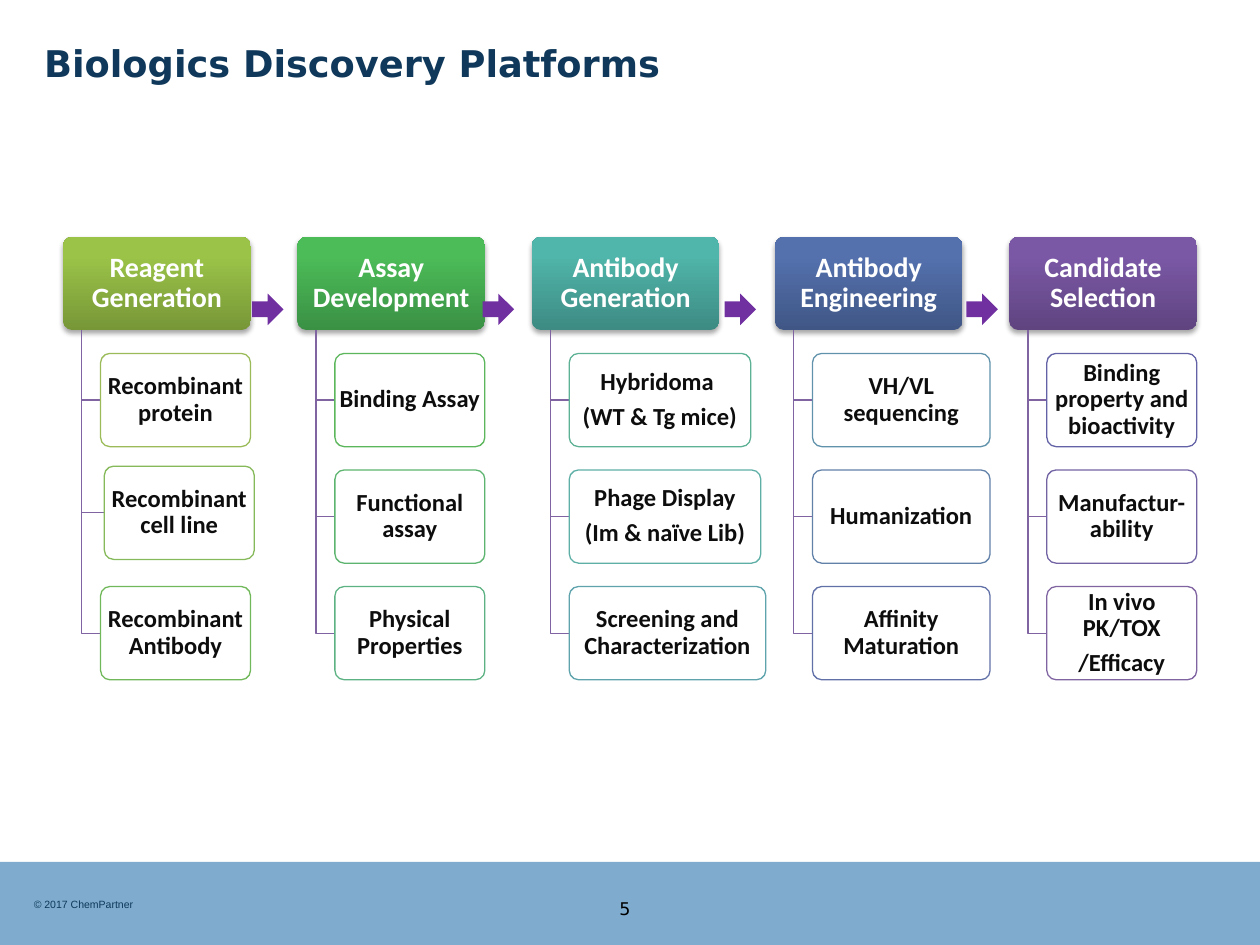
from lxml.etree import SubElement
from pptx import Presentation
from pptx.dml.color import RGBColor
from pptx.enum.shapes import MSO_SHAPE as Preset
from pptx.enum.text import MSO_ANCHOR as Anchor, PP_ALIGN as Align
from pptx.oxml.ns import qn
from pptx.util import Inches, Pt

NAVY = RGBColor(0x0F, 0x38, 0x5A)
BAR_BLUE = RGBColor(0x00, 0x5B, 0x9E)
BRANCH_PURPLE = RGBColor(0x80, 0x64, 0xA2)
ARROW_PURPLE = RGBColor(0x70, 0x30, 0xA0)
INK = RGBColor(0x0D, 0x0D, 0x0D)
BLACK = RGBColor(0, 0, 0)
WHITE = RGBColor(0xFF, 0xFF, 0xFF)

# left, heading, dark and light shades, then (text, width, outline) for each card
STAGES = [
    (0.5, "Reagent Generation", "779737", "9BC348", [
        ("Recombinant protein", 1.19, "9BBB59"),
        ("Recombinant cell line", 1.19, "85B95A"),
        ("Recombinant Antibody", 1.19, "70B85A")]),
    (2.36, "Assay Development", "3A9144", "4CBC58", [
        ("Binding Assay", 1.19, "5CB65B"),
        ("Functional assay", 1.19, "5CB46F"),
        ("Physical Properties", 1.19, "5DB283")]),
    (4.22, "Antibody Generation", "3D8B83", "50B5AA", [
        ("Hybridoma \n(WT & Tg mice)", 1.44, "5DB195"),
        ("Phage Display\n(Im & naïve Lib)", 1.52, "5EAFA6"),
        ("Screening and Characterization", 1.56, "5FA4AD")]),
    (6.15, "Antibody Engineering", "405786", "5471AE", [
        ("VH/VL sequencing", 1.41, "6092AB"),
        ("Humanization", 1.41, "6181A9"),
        ("Affinity Maturation", 1.41, "6171A8")]),
    (8.01, "Candidate Selection", "5F4480", "7B58A6", [
        ("Binding property and bioactivity", 1.19, "6362A6"),
        ("Manufactur-ability", 1.19, "7263A4"),
        ("In vivo PK/TOX\n/Efficacy", 1.19, "8064A2")]),
]
NUDGES = {"Recombinant cell line": (0.03, -0.03)}
ARROW_LEFTS = [2, 3.83, 5.75, 7.67]
HEAD_TOP, HEAD_WIDTH, BOX_HEIGHT = 1.88, 1.49, 0.74
ROW_STEP = BOX_HEIGHT * 1.25
INDENT = HEAD_WIDTH / 5


def write(shape, text, font="Calibri", size=14, color=INK, bold=True,
          align=Align.CENTER, anchor=Anchor.MIDDLE, inset=(0.01, 0),
          line=0.9, after=0.35):
    """Fill a shape with formatted text, one paragraph per line."""
    frame = shape.text_frame
    frame.word_wrap = True
    frame.vertical_anchor = anchor
    frame.margin_left = frame.margin_right = Inches(inset[0])
    frame.margin_top = frame.margin_bottom = Inches(inset[1])
    frame.text = text
    for para in frame.paragraphs:
        para.alignment = align
        para.line_spacing = line
        para.space_before = Pt(0)
        para.space_after = Pt(size * after)
        para.font.name, para.font.size = font, Pt(size)
        para.font.bold, para.font.color.rgb = bold, color


def add_preset(page, preset, *place, fill=None, alpha=100, line=None):
    """Add a shadowless preset shape with an optional fill and outline."""
    shape = page.shapes.add_shape(preset, *map(Inches, place))
    shape.shadow.inherit = False
    if preset == Preset.ROUNDED_RECTANGLE:
        shape.adjustments[0] = 0.1
    if fill is not None:
        shape.fill.solid()
        shape.fill.fore_color.rgb = fill
        if alpha < 100:
            tint = shape.fill._xPr.find(".//" + qn("a:srgbClr"))
            SubElement(tint, qn("a:alpha"), val=str(alpha * 1000))
    if line is None:
        shape.line.fill.background()
    else:
        shape.line.color.rgb = line
        shape.line.width = Pt(0.75)
    return shape


def add_heading(page, left, text, dark, light):
    """Add a stage heading with a gradient and a soft shadow."""
    shape = add_preset(page, Preset.ROUNDED_RECTANGLE,
                       left, HEAD_TOP, HEAD_WIDTH, BOX_HEIGHT)
    shape.fill.gradient()
    shape.fill.gradient_angle = 90
    for stop, shade, position in zip(shape.fill.gradient_stops, (dark, light), (0, 0.8)):
        stop.color.rgb = RGBColor.from_string(shade)
        stop.position = position
    effects = shape._element.spPr.find(qn("a:effectLst"))
    shadow = SubElement(effects, qn("a:outerShdw"), blurRad=str(Pt(3.1)),
                        dist=str(Pt(1.8)), dir="5400000", rotWithShape="0")
    tint = SubElement(shadow, qn("a:srgbClr"), val="000000")
    SubElement(tint, qn("a:alpha"), val="35000")
    write(shape, text, size=16, color=WHITE)


def add_branch(page, left, right, bottom):
    """Add the elbow line from a heading to a card."""
    x, y, end_x, end_y = map(Inches, (left, HEAD_TOP + BOX_HEIGHT, right, bottom))
    builder = page.shapes.build_freeform(x, y)
    builder.add_line_segments([(x, end_y), (end_x, end_y)], close=False)
    branch = builder.convert_to_shape()
    branch.shadow.inherit = False
    branch.fill.background()
    branch.line.color.rgb = BRANCH_PURPLE
    branch.line.width = Pt(0.75)


def add_label(page, text, *place, **style):
    """Add a footer text box."""
    box = page.shapes.add_textbox(*map(Inches, place))
    write(box, text, bold=False, anchor=Anchor.TOP, inset=(0.1, 0.05),
          line=1, after=0, **style)


def main():
    """Build the platforms slide."""
    deck = Presentation()
    deck.slide_width, deck.slide_height = Inches(10), Inches(7.5)
    page = deck.slides.add_slide(deck.slide_layouts[5])

    title = page.shapes.title
    title.left, title.top, title.width, title.height = map(Inches, (0.25, 0, 9.42, 1))
    write(title, "Biologics Discovery Platforms", font="DejaVu Sans", size=21,
          color=NAVY, align=Align.LEFT, inset=(0.1, 0.05), line=1, after=0)

    add_preset(page, Preset.RECTANGLE, 0, 6.84, 10, 0.66, fill=BAR_BLUE, alpha=50)
    add_label(page, "© 2017 ChemPartner", 0.17, 7.08, 5, 0.2,
              font="Arial", size=6, color=NAVY, align=Align.LEFT)
    add_label(page, "5", 4.43, 7.08, 1.06, 0.28,
              font="DejaVu Sans", size=10, color=BLACK)

    for left, heading, dark, light, cards in STAGES:
        add_heading(page, left, heading, dark, light)
        for row, (text, width, outline) in enumerate(cards, start=1):
            shift_x, shift_y = NUDGES.get(text, (0, 0))
            card_left = left + INDENT + shift_x
            card_top = HEAD_TOP + row * ROW_STEP + shift_y
            add_branch(page, left + INDENT / 2, card_left, card_top + BOX_HEIGHT / 2)
            card = add_preset(page, Preset.ROUNDED_RECTANGLE, card_left, card_top,
                              width, BOX_HEIGHT, fill=WHITE, alpha=90,
                              line=RGBColor.from_string(outline))
            write(card, text)

    for left in ARROW_LEFTS:
        add_preset(page, Preset.RIGHT_ARROW, left, 2.33, 0.25, 0.25, fill=ARROW_PURPLE)
    deck.save("out.pptx")


if __name__ == "__main__":
    main()
